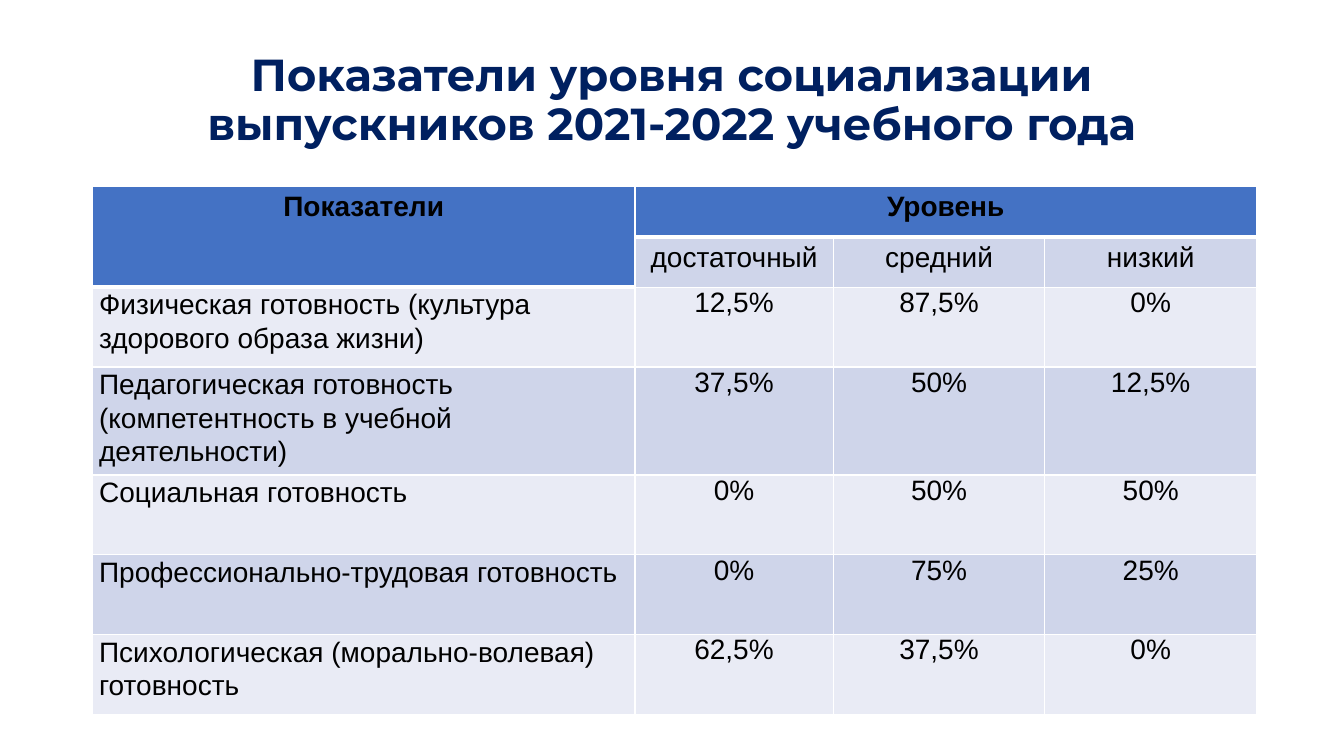
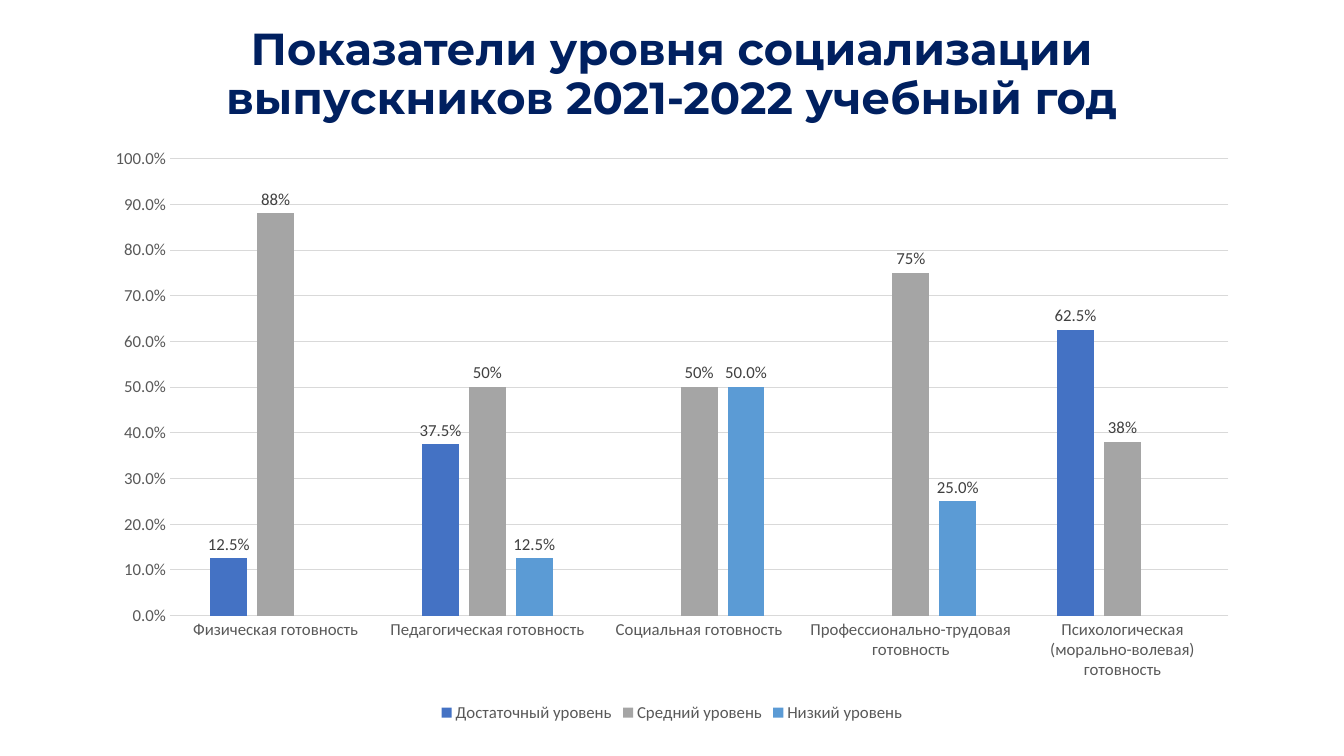
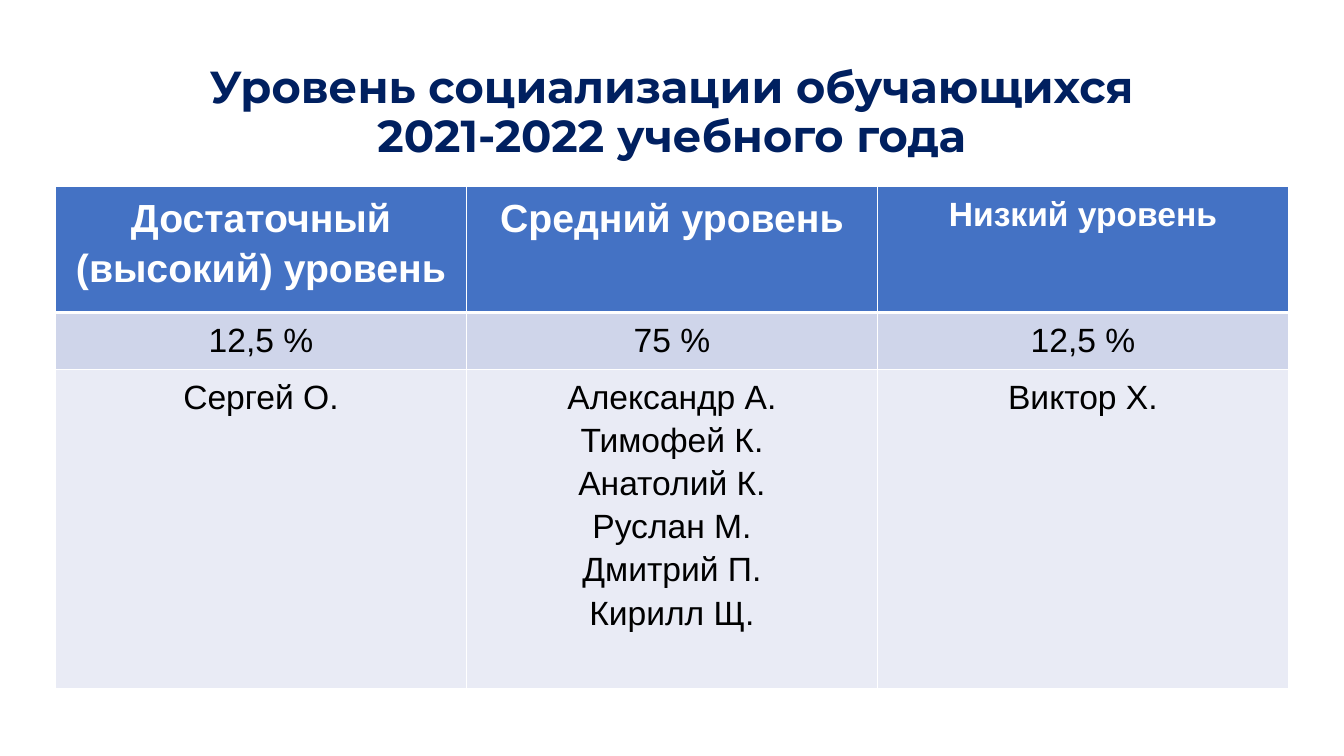
import lxml.etree
import pptx
import pptx.chart.data
import pptx.dml.color
import pptx.enum.chart
import pptx.enum.text
import pptx.oxml.ns
import pptx.util

GRID = (160, 90)
SIZE = (pptx.util.Emu(12192000), pptx.util.Emu(6858000))
HUES = {
    "title": "002060", "head": "4472C4", "odd": "CFD5EA", "even": "E9EBF5",
    "white": "FFFFFF", "black": "000000", "axis": "595959", "label": "404040",
    "rule": "D9D9D9", "high": "4472C4", "mid": "A5A5A5", "low": "5B9BD5",
}
ALIGN = pptx.enum.text.PP_ALIGN
TITLE = {"size": pptx.util.Pt(32), "name": "Montserrat", "bold": True}
SMALL = {"size": pptx.util.Pt(12), "name": "Calibri", "bold": False}


def col(n):
    return pptx.util.Emu(round(SIZE[0] * n / GRID[0]))


def row(n):
    return pptx.util.Emu(round(SIZE[1] * n / GRID[1]))


def place(box):
    x, y, w, h = box
    return col(x), row(y), col(w), row(h)


def tint(hue):
    return pptx.dml.color.RGBColor.from_string(HUES[hue])


def put(item, look):
    for key, value in look.items():
        setattr(item, key, value)


def ink(font, look, hue):
    put(font, look)
    font.color.rgb = tint(hue)


def write(frame, text, look, hue, para):
    frame.text = text
    for line in frame.paragraphs:
        put(line, para)
        for run in line.runs:
            ink(run.font, look, hue)


def title(slide, box, text):
    frame = slide.shapes.add_textbox(*place(box)).text_frame
    put(frame, {"word_wrap": True,
                "vertical_anchor": pptx.enum.text.MSO_ANCHOR.MIDDLE})
    write(frame, text, TITLE, "title",
          {"alignment": ALIGN.CENTER, "line_spacing": 0.9})


def edge(cell, side, width):
    props = cell._tc.get_or_add_tcPr()
    name = pptx.oxml.ns.qn
    line = lxml.etree.SubElement(props, name("a:ln" + side),
                                 w=str(pptx.util.Pt(width)))
    fill = lxml.etree.SubElement(line, name("a:solidFill"))
    lxml.etree.SubElement(fill, name("a:srgbClr"), val=HUES["white"])


def table(slide, box, cols, rows, texts, heads, spans, style):
    grid = slide.shapes.add_table(len(rows), len(cols), *place(box)).table
    put(grid, {"first_row": False, "horz_banding": False})
    for n, share in enumerate(cols):
        grid.columns[n].width = col(box[2] * share / sum(cols))
    for n, share in enumerate(rows):
        grid.rows[n].height = row(box[3] * share / sum(rows))
    for r, line in enumerate(texts):
        for c, text in enumerate(line):
            cell = grid.cell(r, c)
            head = (r, c) in heads
            under = (r - 1, c) in heads and not head
            edges = {"L": 1, "R": 1, "T": 3 if under else 1,
                     "B": 3 if head else 1}
            for side, width in edges.items():
                edge(cell, side, width)
            cell.fill.solid()
            cell.fill.fore_color.rgb = tint(
                "head" if head else "odd" if r % 2 else "even")
            look, hue, para, (dx, dy) = style(r, c)
            put(cell, {"margin_left": col(dx), "margin_right": col(dx),
                       "margin_top": row(dy), "margin_bottom": row(dy)})
            write(cell.text_frame, text, look, hue, para)
    for start, end in spans:
        grid.cell(*start).merge(grid.cell(*end))


def scores(r, c):
    look = {"size": pptx.util.Pt(20), "name": "Arial", "bold": r == 0}
    left = r > 1 and c == 0
    para = {"alignment": ALIGN.LEFT if left else ALIGN.CENTER,
            "line_spacing": 1.07 if left else 1.0}
    return look, "black", para, (0.8, 0) if r > 1 else (1.2, 0.6)


def names(r, c):
    big = r == 0 and c < 2
    look = {"size": pptx.util.Pt(28 if big else 24), "name": "Arial",
            "bold": r == 0}
    para = {"alignment": ALIGN.CENTER, "line_spacing": 1.15}
    return look, "black" if r else "white", para, (1, 0.5)


def chart(slide, box, cats, series):
    kinds = pptx.enum.chart
    data = pptx.chart.data.CategoryChartData()
    data.categories = cats
    for name, values, _, _ in series:
        data.add_series(name, values)
    graph = slide.shapes.add_chart(
        kinds.XL_CHART_TYPE.COLUMN_CLUSTERED, *place(box), data).chart
    put(graph, {"has_title": False, "has_legend": True})
    ink(graph.font, SMALL, "axis")
    put(graph.legend, {"position": kinds.XL_LEGEND_POSITION.BOTTOM,
                       "include_in_layout": False})
    ink(graph.legend.font, SMALL, "axis")
    plot = graph.plots[0]
    put(plot, {"gap_width": 219, "overlap": -27, "vary_by_categories": False})
    for bars, (_, _, hue, form) in zip(plot.series, series):
        bars.format.fill.solid()
        bars.format.fill.fore_color.rgb = tint(hue)
        bars.invert_if_negative = False
        put(bars.data_labels, {
            "show_value": True, "number_format": form,
            "number_format_is_linked": False,
            "position": kinds.XL_LABEL_POSITION.OUTSIDE_END})
        ink(bars.data_labels.font, SMALL, "label")
    base, scale = graph.category_axis, graph.value_axis
    for axis in (base, scale):
        put(axis, {"major_tick_mark": kinds.XL_TICK_MARK.NONE,
                   "minor_tick_mark": kinds.XL_TICK_MARK.NONE})
        ink(axis.tick_labels.font, SMALL, "axis")
    put(scale, {"minimum_scale": 0, "maximum_scale": 1, "major_unit": 0.1,
                "has_major_gridlines": True})
    put(scale.tick_labels, {"number_format": "0.0%",
                            "number_format_is_linked": False})
    scale.format.line.fill.background()
    for rule in (base.format.line, scale.major_gridlines.format.line):
        rule.color.rgb = tint("rule")
        rule.width = pptx.util.Pt(0.75)


def levels(slide):
    title(slide, (11, 4.8, 138, 14.6),
          "Показатели уровня социализации выпускников 2021-2022 учебного года")
    texts = [
        ("Показатели", "Уровень", "", ""),
        ("", "достаточный", "средний", "низкий"),
        ("Физическая готовность (культура здорового образа жизни)",
         "12,5%", "87,5%", "0%"),
        ("Педагогическая готовность (компетентность в учебной деятельности)",
         "37,5%", "50%", "12,5%"),
        ("Социальная готовность", "0%", "50%", "50%"),
        ("Профессионально-трудовая готовность", "0%", "75%", "25%"),
        ("Психологическая (морально-волевая) готовность",
         "62,5%", "37,5%", "0%"),
    ]
    heads = {(0, 0), (0, 1), (0, 2), (0, 3), (1, 0)}
    spans = [((0, 0), (1, 0)), ((0, 1), (0, 3))]
    table(slide, (11, 22.2, 138.6, 59.5), (64.6, 23.6, 25.2, 25.2),
          (6, 6) + (9.5,) * 5, texts, heads, spans, scores)


def bars(slide):
    title(slide, (11, 3.5, 138, 11),
          "Показатели уровня социализации\vвыпускников 2021-2022 учебный год")
    cats = ["Физическая готовность", "Педагогическая готовность",
            "Социальная готовность", "Профессионально-трудовая готовность",
            "Психологическая (морально-волевая) готовность"]
    series = [
        ("Достаточный уровень", (0.125, 0.375, None, None, 0.625),
         "high", "0.0%"),
        ("Средний уровень", (0.88, 0.5, 0.5, 0.75, 0.38), "mid", "0%"),
        ("Низкий уровень", (None, 0.125, 0.5, 0.25, None), "low", "0.0%"),
    ]
    chart(slide, (11, 16.3, 138, 70.2), cats, series)


def pupils(slide):
    title(slide, (11, 4.8, 138, 17.4),
          "Уровень социализации обучающихся\v2021-2022 учебного года")
    texts = [
        ("Достаточный\n(высокий) уровень", "Средний уровень",
         "Низкий уровень"),
        ("12,5 %", "75 %", "12,5 %"),
        ("Сергей О.",
         "Александр А.\nТимофей К.\nАнатолий К.\n"
         "Руслан М.\nДмитрий П.\nКирилл Щ.",
         "Виктор Х."),
    ]
    table(slide, (6.6, 22.2, 146.8, 59.8), (1, 1, 1), (15, 6.8, 38),
          texts, {(0, 0), (0, 1), (0, 2)}, [], names)


def main():
    deck = pptx.Presentation()
    put(deck, {"slide_width": SIZE[0], "slide_height": SIZE[1]})
    for build in (levels, bars, pupils):
        build(deck.slides.add_slide(deck.slide_layouts[6]))
    deck.save("out.pptx")


if __name__ == "__main__":
    main()
